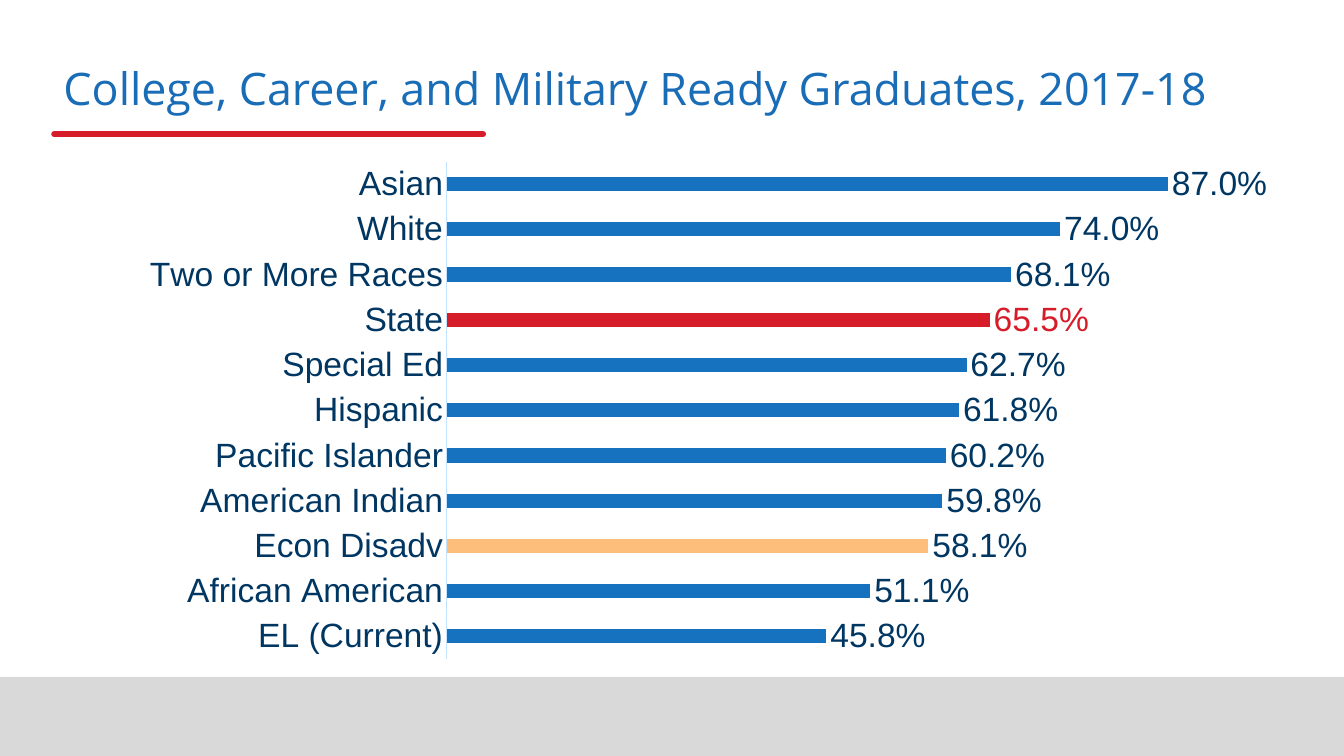
from lxml import etree
from pptx import Presentation
from pptx import util as u
from pptx.chart.data import CategoryChartData
from pptx.dml.color import RGBColor
from pptx.enum import chart as ch, shapes, text
from pptx.oxml import parse_xml
from pptx.oxml.ns import nsdecls, qn

BLUE = RGBColor(0x16, 0x72, 0xBE)
TITLE_BLUE = RGBColor(0x19, 0x6C, 0xB6)
NAVY = RGBColor(0x00, 0x36, 0x62)
RED = RGBColor(0xD5, 0x1C, 0x28)
ORANGE = RGBColor(0xFD, 0xBE, 0x7C)
PALE_BLUE = RGBColor(0xC1, 0xE3, 0xFF)
GREY = RGBColor(0xD9, 0xD9, 0xD9)

RATES = [
    ("EL (Current)", 0.458),
    ("African American", 0.511),
    ("Econ Disadv", 0.581),
    ("American Indian", 0.598),
    ("Pacific Islander", 0.602),
    ("Hispanic", 0.618),
    ("Special Ed", 0.627),
    ("State", 0.655),
    ("Two or More Races", 0.681),
    ("White", 0.74),
    ("Asian", 0.87),
]
HIGHLIGHTS = {"Econ Disadv": ORANGE, "State": RED}


def set_font(font, size, color, name="Arial"):
    font.size = u.Pt(size)
    font.name = name
    font.bold = False
    font.color.rgb = color


prs = Presentation()
prs.slide_width, prs.slide_height = u.Cm(33.87), u.Cm(19.05)
s = prs.slides.add_slide(prs.slide_layouts[6])

# Footer band
band = s.shapes.add_shape(shapes.MSO_SHAPE.RECTANGLE, 0, u.Cm(17.06),
                          prs.slide_width, u.Cm(1.99))
band.shadow.inherit = False
band.fill.solid()
band.fill.fore_color.rgb = GREY
band.line.fill.background()

# Title and its rule
sp = s.shapes.add_textbox(u.Cm(1.35), 0, u.Cm(31.06), u.Cm(3.02))
tf = sp.text_frame
tf.word_wrap = True
tf.vertical_anchor = text.MSO_ANCHOR.BOTTOM
tf.text = "College, Career, and Military Ready Graduates, 2017-18"
p = tf.paragraphs[0]
p.line_spacing = 0.9
set_font(p.runs[0].font, 32, TITLE_BLUE, "Open Sans")

rule = s.shapes.add_connector(shapes.MSO_CONNECTOR.STRAIGHT,
                              u.Cm(1.37), u.Cm(3.38), u.Cm(12.17), u.Cm(3.38))
rule.line.color.rgb = RED
rule.line.width = u.Pt(4.5)
rule.line._get_or_add_ln().set("cap", "rnd")
etree.SubElement(rule._element.spPr, qn("a:effectLst"))

# Bar chart
data = CategoryChartData(number_format="0.0%")
data.categories = [name for name, _ in RATES]
data.add_series("Series 1", [rate for _, rate in RATES])
chart = s.shapes.add_chart(ch.XL_CHART_TYPE.BAR_CLUSTERED, u.Cm(3.2), u.Cm(3.81),
                           u.Cm(29.54), u.Cm(13.06), data).chart
chart.has_legend = False
chart.has_title = False
set_font(chart.font, 10, NAVY)

# Axes
cat_axis = chart.category_axis
cat_axis.major_tick_mark = ch.XL_TICK_MARK.NONE
cat_axis.has_major_gridlines = False
cat_axis.format.line.color.rgb = PALE_BLUE
cat_axis.format.line.width = u.Pt(0.75)
set_font(cat_axis.tick_labels.font, 24, NAVY)

val_axis = chart.value_axis
val_axis.minimum_scale, val_axis.maximum_scale = 0, 1
val_axis.has_major_gridlines = False
val_axis.tick_labels.number_format = "0%"
val_axis.tick_labels.number_format_is_linked = False
val_axis.visible = False

# Bars and value labels
plot = chart.plots[0]
plot.gap_width = 219
plot.vary_by_categories = False
series = plot.series[0]
series.format.fill.solid()
series.format.fill.fore_color.rgb = BLUE
labels = series.data_labels
labels.show_value = True
labels.number_format = "0.0%"
labels.number_format_is_linked = False
labels.position = ch.XL_LABEL_POSITION.OUTSIDE_END
set_font(labels.font, 24, NAVY)

for i, (name, _) in enumerate(RATES):
    if name in HIGHLIGHTS:
        fill = series.points[i].format.fill
        fill.solid()
        fill.fore_color.rgb = HIGHLIGHTS[name]
    if name == "State":
        label = series.points[i].data_label
        set_font(label.font, 24, RED)
        label.position = ch.XL_LABEL_POSITION.OUTSIDE_END

# Plot area within the chart frame, as fractions
plot_area = chart._chartSpace.chart.plotArea
for old in plot_area.findall(qn("c:layout")):
    plot_area.remove(old)
frame = "".join(f'<c:{tag} val="{val}"/>' for tag, val in [
    ("layoutTarget", "inner"), ("xMode", "edge"), ("yMode", "edge"),
    ("x", 0.273), ("y", 0.02), ("w", 0.707), ("h", 0.96)])
plot_area.insert(0, parse_xml(
    f'<c:layout {nsdecls("c")}><c:manualLayout>{frame}</c:manualLayout></c:layout>'))

prs.save("out.pptx")
